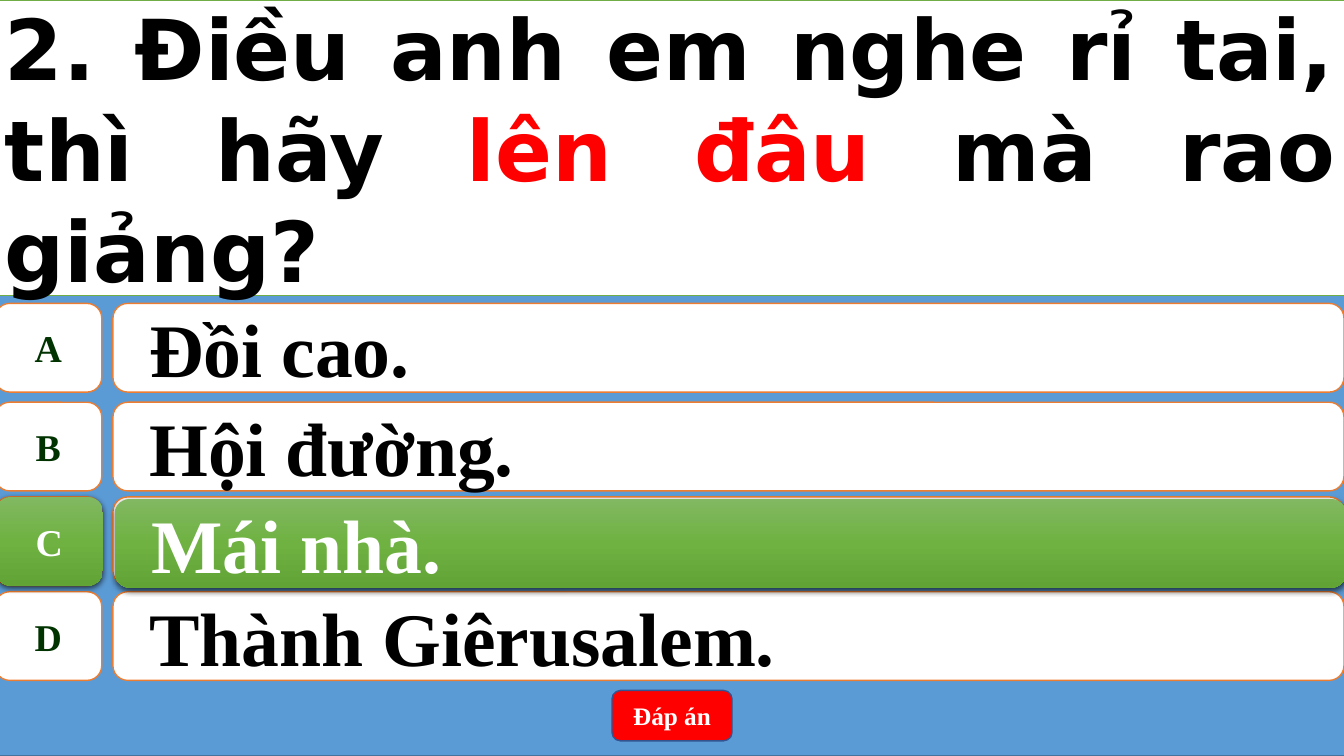
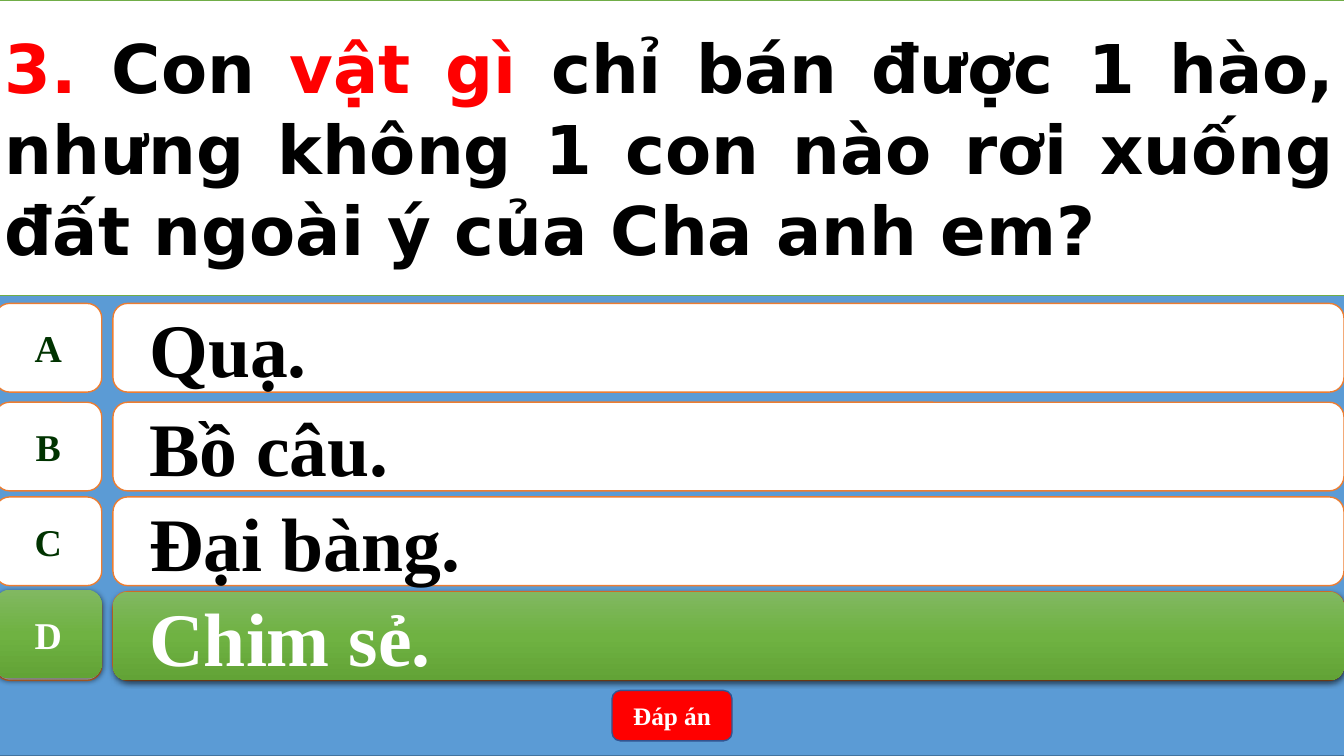
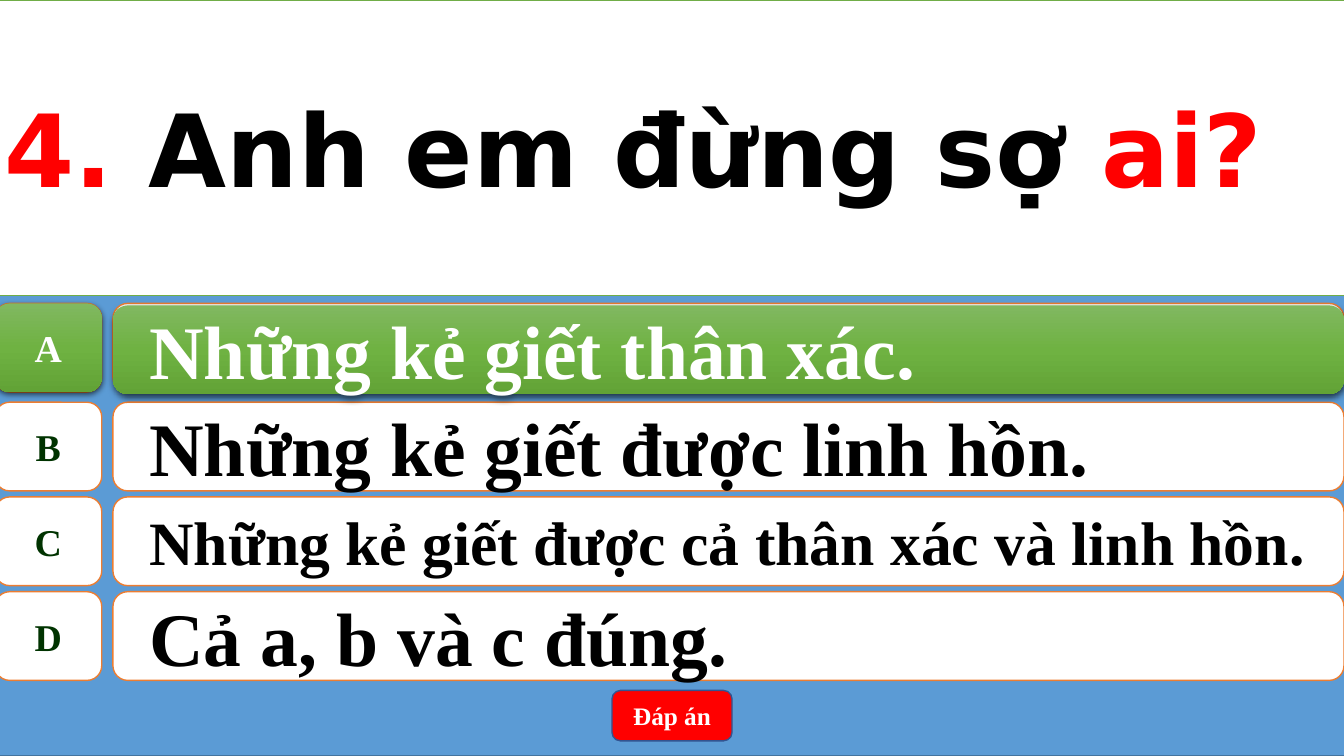
from copy import deepcopy

from pptx import Presentation
from pptx.dml.color import RGBColor
from pptx.enum.shapes import MSO_SHAPE
from pptx.enum.text import MSO_ANCHOR, PP_ALIGN
from pptx.oxml import parse_xml
from pptx.oxml.ns import nsdecls, qn
from pptx.util import Inches, Pt

# Content: question runs as (text, colour); shifts move the highlight off its row
QUIZ = [
    {"question": [("2. Điều anh em nghe rỉ tai, thì hãy ", "black"),
                  ("lên đâu ", "red"), ("mà rao giảng?", "black")],
     "size": 60,
     "answers": ["Đồi cao.", "Hội đường.", "Mái nhà.", "Thành Giêrusalem."],
     "correct": 2, "letter_shift": (0.01, 0), "answer_shift": (0.02, 0.02)},
    {"question": [("3. ", "red"), ("Con ", "black"), ("vật gì ", "red"),
                  ("chỉ bán được 1 hào, nhưng không 1 con nào rơi xuống đất "
                   "ngoài ý của Cha anh em?", "black")],
     "size": 48,
     "answers": ["Quạ.", "Bồ câu.", "Đại bàng.", "Chim sẻ."],
     "correct": 3, "letter_shift": (0, -0.02), "answer_shift": (0, 0)},
    {"question": [("4. ", "red"), ("Anh em đừng sợ ", "black"), ("ai?", "red")],
     "size": 72,
     "answers": ["Những kẻ giết thân xác.", "Những kẻ giết được linh hồn.",
                 "Những kẻ giết được cả thân xác và linh hồn.",
                 "Cả a, b và c đúng."],
     "correct": 0, "letter_shift": (0, 0), "answer_shift": (0, 0.02)},
]
LETTERS = "ABCD"
REVEAL = "Đáp án"

# Shared look
COLORS = {"black": "000000", "red": "FF0000", "white": "FFFFFF",
          "blue": "5B9BD5", "blue_edge": "43739E", "orange": "ED7D31",
          "green": "70AD47", "letter": "003300", "button_edge": "325491"}
HIGHLIGHT = [(0, "81B861"), (0.5, "6FB242"), (1, "62A336")]
SERIF, SANS = "Times New Roman", "DejaVu Sans"
LONG_ANSWER = 30

# Layout in inches
WIDTH, HEIGHT = 13.33, 7.5
LEFT, FULL_WIDTH = -0.05, 13.39
QUESTION_HEIGHT = 2.93
ROW_TOPS = [3.01] + [3.99 + 0.94 * row for row in range(3)]
ROW_HEIGHT = 0.88
LETTER_WIDTH = 1.06
ANSWER_LEFT, ANSWER_WIDTH = 1.12, 12.21
BUTTON = (6.07, 6.85, 1.19, 0.5)


def rgb(name):
    return RGBColor.from_string(COLORS[name])


def add_panel(shapes, kind, box, fill, edge):
    panel = shapes.add_shape(kind, *(Inches(length) for length in box))
    panel.shadow.inherit = False
    if fill == "highlight":
        paint_highlight(panel)
    else:
        panel.fill.solid()
        panel.fill.fore_color.rgb = rgb(fill)
        panel.line.color.rgb = rgb(edge)
        panel.line.width = Pt(1)
    return panel


def paint_highlight(panel):
    """Three-stop green gradient with a soft shadow below, no outline."""
    panel.line.fill.background()
    panel.fill.gradient()
    panel.fill.gradient_angle = 270
    properties = panel.element.spPr
    stops = properties.find(".//" + qn("a:gsLst"))
    stops.insert(1, deepcopy(stops[0]))
    for stop, (position, color) in zip(panel.fill.gradient_stops, HIGHLIGHT):
        stop.position = position
        stop.color.rgb = RGBColor.from_string(color)
    properties.find(qn("a:effectLst")).append(parse_xml(
        f'<a:outerShdw {nsdecls("a")} blurRad="{Pt(4.5)}" dist="{Pt(1.5)}" '
        'dir="5400000" algn="ctr" rotWithShape="0"><a:srgbClr val="000000">'
        '<a:alpha val="63000"/></a:srgbClr></a:outerShdw>'))


def write(panel, runs, size, font, align, wrap=True):
    frame = panel.text_frame
    frame.word_wrap = wrap
    frame.vertical_anchor = MSO_ANCHOR.MIDDLE
    paragraph = frame.paragraphs[0]
    paragraph.alignment = align
    for text, color in runs:
        run = paragraph.add_run()
        run.text = text
        run.font.size = Pt(size)
        run.font.name = font
        run.font.bold = True
        run.font.color.rgb = rgb(color)
    return paragraph


def add_answer_row(slide, row, answer, highlighted=False,
                   letter_shift=(0, 0), answer_shift=(0, 0)):
    shapes = slide.shapes.add_group_shape().shapes
    fill = "highlight" if highlighted else "white"
    top = ROW_TOPS[row]

    dx, dy = letter_shift
    letter = add_panel(shapes, MSO_SHAPE.FLOWCHART_ALTERNATE_PROCESS,
                       (LEFT + dx, top + dy, LETTER_WIDTH, ROW_HEIGHT),
                       fill, "orange")
    write(letter, [(LETTERS[row], "white" if highlighted else "letter")],
          27, SERIF, PP_ALIGN.CENTER, wrap=False)

    dx, dy = answer_shift
    bar = add_panel(shapes, MSO_SHAPE.ROUNDED_RECTANGLE,
                    (ANSWER_LEFT + dx, top + dy, ANSWER_WIDTH, ROW_HEIGHT),
                    fill, "orange")
    size = 44 if len(answer) > LONG_ANSWER else 54
    paragraph = write(bar, [(answer, "white" if highlighted else "black")],
                      size, SERIF, PP_ALIGN.LEFT)
    paragraph.level = 1
    indents = paragraph._p.get_or_add_pPr()
    indents.set("marL", str(Inches(0.5)))
    indents.set("indent", str(Inches(-0.28)))


def add_quiz_slide(deck, quiz):
    slide = deck.slides.add_slide(deck.slide_layouts[6])
    add_panel(slide.shapes, MSO_SHAPE.RECTANGLE,
              (LEFT, 0, FULL_WIDTH, HEIGHT), "blue", "blue_edge")

    # Answers, then the highlighted one over its row
    for row, answer in enumerate(quiz["answers"]):
        add_answer_row(slide, row, answer)
    correct = quiz["correct"]
    add_answer_row(slide, correct, quiz["answers"][correct], True,
                   quiz["letter_shift"], quiz["answer_shift"])

    # Reveal button
    button = add_panel(slide.shapes, MSO_SHAPE.ROUNDED_RECTANGLE, BUTTON,
                       "red", "button_edge")
    write(button, [(REVEAL, "white")], 18, SERIF, PP_ALIGN.CENTER)

    # Question band
    band = add_panel(slide.shapes, MSO_SHAPE.RECTANGLE,
                     (LEFT, 0, FULL_WIDTH, QUESTION_HEIGHT), "white", "green")
    write(band, quiz["question"], quiz["size"], SANS, PP_ALIGN.JUSTIFY)


def main():
    deck = Presentation()
    deck.slide_width, deck.slide_height = Inches(WIDTH), Inches(HEIGHT)
    for quiz in QUIZ:
        add_quiz_slide(deck, quiz)
    deck.save("out.pptx")


if __name__ == "__main__":
    main()
